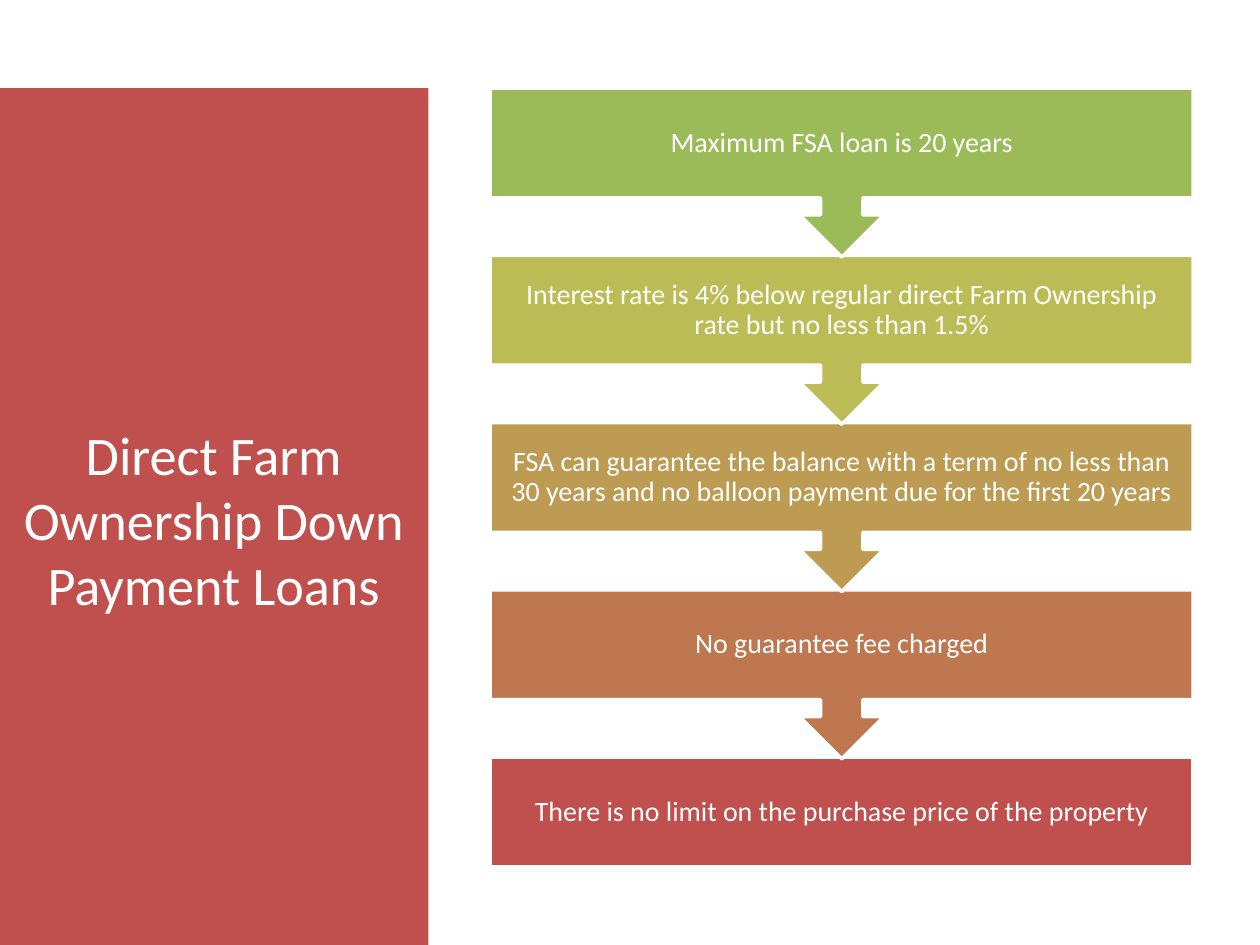
from pptx import Presentation
from pptx.dml.color import RGBColor
from pptx.enum import shapes, text
from pptx.util import Inches, Pt

COLORS = {
    "white": "FFFFFF",
    "red": "C0504D",
    "rust": "BF7750",
    "tan": "BD9B53",
    "olive": "BCBC56",
    "green": "9BBB59",
}

STEPS = [
    ("Maximum FSA loan is 20 years", "green"),
    ("Interest rate is 4% below regular direct Farm Ownership rate "
     "but no less than 1.5%", "olive"),
    ("FSA can guarantee the balance with a term of no less than 30 years "
     "and no balloon payment due for the first 20 years", "tan"),
    ("No guarantee fee charged", "rust"),
    ("There is no limit on the purchase price of the property", "red"),
]

STEP_LEFT, STEP_WIDTH = 3.89, 5.58
FIRST_TOP, LAST_TOP = 0.7, 6.01
STEP_PITCH = (LAST_TOP - FIRST_TOP) / (len(STEPS) - 1)
BOX_HEIGHT, CALLOUT_HEIGHT = 0.87, 1.34

FRAME_FORMAT = {
    "word_wrap": True,
    "vertical_anchor": text.MSO_ANCHOR.MIDDLE,
}
STEP_FRAME_FORMAT = FRAME_FORMAT | {
    "margin_" + side: Inches(0.12) for side in ("left", "top", "right", "bottom")
}


def color(name):
    return RGBColor.from_string(COLORS[name])


def apply(target, values):
    for name, value in values.items():
        setattr(target, name, value)


def write(shape, words, size, frame_format, spacing=1.0):
    """Put one centred white paragraph into a shape."""
    frame = shape.text_frame
    apply(frame, frame_format)
    para = frame.paragraphs[0]
    apply(para, {"alignment": text.PP_ALIGN.CENTER, "line_spacing": spacing})
    span = para.add_run()
    span.text = words
    apply(span.font, {"size": Pt(size), "name": "Calibri"})
    span.font.color.rgb = color("white")


def add_block(page, kind, at, fill, outline=None):
    """Add a filled preset shape, with an outline if a colour is given."""
    block = page.shapes.add_shape(kind, *map(Inches, at))
    block.shadow.inherit = False
    block.fill.solid()
    block.fill.fore_color.rgb = color(fill)
    if outline:
        block.line.color.rgb = color(outline)
        block.line.width = Pt(2)
    else:
        block.line.fill.background()
    return block


def add_step(page, index, words, fill):
    """Add one step; all but the last point down to the next one."""
    top = FIRST_TOP + index * STEP_PITCH
    is_last = index == len(STEPS) - 1
    kind = (shapes.MSO_SHAPE.RECTANGLE if is_last
            else shapes.MSO_SHAPE.UP_ARROW_CALLOUT)
    height = BOX_HEIGHT if is_last else CALLOUT_HEIGHT
    block = add_block(page, kind, (STEP_LEFT, top, STEP_WIDTH, height),
                      fill, "white")
    if not is_last:
        block.rotation = 180

    # The label stays upright over the body of the turned callout
    label = page.shapes.add_textbox(
        *map(Inches, (STEP_LEFT, top, STEP_WIDTH, BOX_HEIGHT)))
    write(label, words, 16, STEP_FRAME_FORMAT, 0.9)


def main():
    deck = Presentation()
    apply(deck, {"slide_width": Inches(10), "slide_height": Inches(7.5)})
    page = deck.slides.add_slide(deck.slide_layouts[6])

    # Steps, from the bottom up so each arrow lies over the next step
    for index, (words, fill) in reversed(list(enumerate(STEPS))):
        add_step(page, index, words, fill)

    # Title panel
    panel = add_block(page, shapes.MSO_SHAPE.RECTANGLE,
                      (-0.01, 0.7, 3.41, 6.83), "red")
    write(panel, "Direct Farm Ownership Down Payment Loans", 31, FRAME_FORMAT)

    deck.save("out.pptx")


if __name__ == "__main__":
    main()
